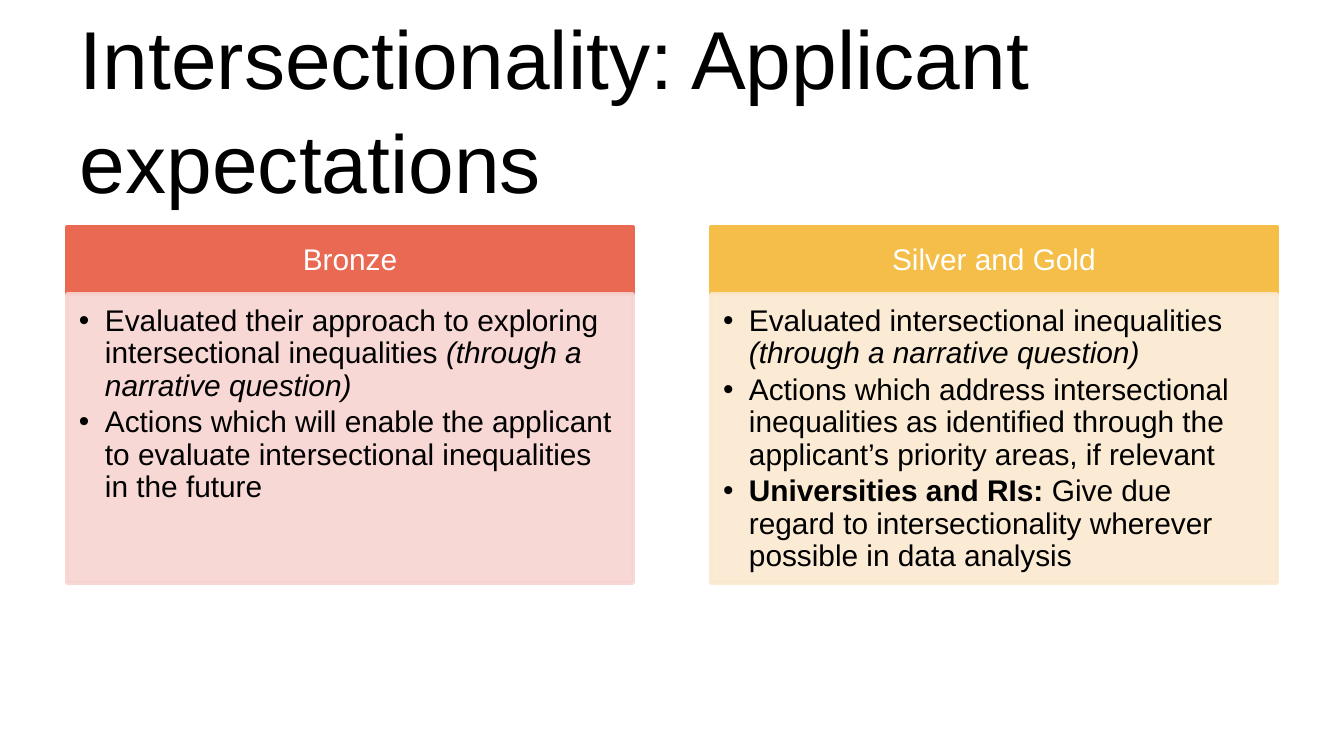
from pptx import Presentation
from pptx.dml.color import RGBColor
from pptx.enum.shapes import MSO_SHAPE
from pptx.enum.text import MSO_ANCHOR as ANCHOR, PP_ALIGN as ALIGN
from pptx.oxml.ns import qn
from pptx.util import Pt
from lxml.etree import SubElement

TITLE = "Intersectionality: Applicant expectations"
# Each run is (text, format values)
NARRATIVE = ("(through a narrative question)", {"italic": True})
COLUMNS = [
    {"heading": "Bronze", "strong": "EA6953", "pale": "F7D4D1", "points": [
        [("Evaluated their approach to exploring intersectional inequalities ", {}), NARRATIVE],
        [("Actions which will enable the applicant to evaluate intersectional "
          "inequalities in the future", {})],
    ]},
    {"heading": "Silver and Gold", "strong": "F4BE49", "pale": "FBE8D0", "points": [
        [("Evaluated intersectional inequalities ", {}), NARRATIVE],
        [("Actions which address intersectional inequalities as identified through the "
          "applicant’s priority areas, if relevant", {})],
        [("Universities and RIs: ", {"bold": True}),
         ("Give due regard to intersectionality wherever possible in data analysis", {})],
    ]},
]

SLIDE_WIDTH, SLIDE_HEIGHT = 1344, 756
MARGIN = 67
COLUMN_WIDTH = 566
COLUMN_STEP = SLIDE_WIDTH - 2 * MARGIN - COLUMN_WIDTH
HEADING_TOP, HEADING_HEIGHT, BODY_HEIGHT = 227, 67, 289
TEXT_SIZE = 16
BULLET_INDENT = 26


def px(length):
    return round(length * 914400 / 134.4)


def color(value):
    return RGBColor.from_string(value)


def set_frame(shape, anchor, insets):
    """Set wrapping, anchor and the left, top, right and bottom insets."""
    frame = shape.text_frame
    frame.word_wrap = True
    frame.vertical_anchor = anchor
    for side, inset in zip(("left", "top", "right", "bottom"), insets):
        setattr(frame, f"margin_{side}", px(inset))
    return frame


def add_run(para, text, size, hex_color, formats):
    span = para.add_run()
    span.text = text
    values = {"name": "Arial", "size": Pt(size), **formats}
    for name, value in values.items():
        setattr(span.font, name, value)
    span.font.color.rgb = color(hex_color)


def add_panel(slide, left, top, height, fill, opacity=100):
    panel = slide.shapes.add_shape(
        MSO_SHAPE.RECTANGLE, px(left), px(top), px(COLUMN_WIDTH), px(height))
    panel.shadow.inherit = False
    panel.fill.solid()
    panel.fill.fore_color.rgb = color(fill)
    panel.line.color.rgb = color(fill)
    panel.line.width = Pt(2)
    if opacity < 100:
        for tone in panel._element.spPr.iter(qn("a:srgbClr")):
            SubElement(tone, qn("a:alpha"), val=str(opacity * 1000))
    return panel


def add_bullet(para):
    properties = para._p.get_or_add_pPr()
    properties.set("marL", str(px(BULLET_INDENT)))
    properties.set("indent", str(-px(BULLET_INDENT)))
    SubElement(properties, qn("a:buFont"), typeface="Arial")
    SubElement(properties, qn("a:buChar"), char="•")


def add_column(slide, left, column):
    heading = add_panel(slide, left, HEADING_TOP, HEADING_HEIGHT, column["strong"])
    para = set_frame(heading, ANCHOR.MIDDLE, (16, 9, 16, 9)).paragraphs[0]
    para.alignment = ALIGN.CENTER
    para.line_spacing = 0.9
    add_run(para, column["heading"], TEXT_SIZE, "FFFFFF", {})

    body = add_panel(slide, left, HEADING_TOP + HEADING_HEIGHT, BODY_HEIGHT,
                     column["pale"], opacity=90)
    frame = set_frame(body, ANCHOR.TOP, (12, 12, 16, 19))
    for index, point in enumerate(column["points"]):
        para = frame.add_paragraph() if index else frame.paragraphs[0]
        add_bullet(para)
        para.alignment = ALIGN.LEFT
        para.line_spacing = 0.9
        para.space_after = Pt(TEXT_SIZE * 0.15)
        for text, formats in point:
            add_run(para, text, TEXT_SIZE, "000000", formats)


deck = Presentation()
deck.slide_width, deck.slide_height = px(SLIDE_WIDTH), px(SLIDE_HEIGHT)
slide = deck.slides.add_slide(deck.slide_layouts[6])

title = slide.shapes.add_textbox(
    px(MARGIN), px(40), px(SLIDE_WIDTH - 2 * MARGIN), px(126))
para = set_frame(title, ANCHOR.MIDDLE, (13, 13, 13, 7)).paragraphs[0]
para.line_spacing = 1.05
add_run(para, TITLE, 44, "000000", {})

for index, column in enumerate(COLUMNS):
    add_column(slide, MARGIN + index * COLUMN_STEP, column)

deck.save("out.pptx")
